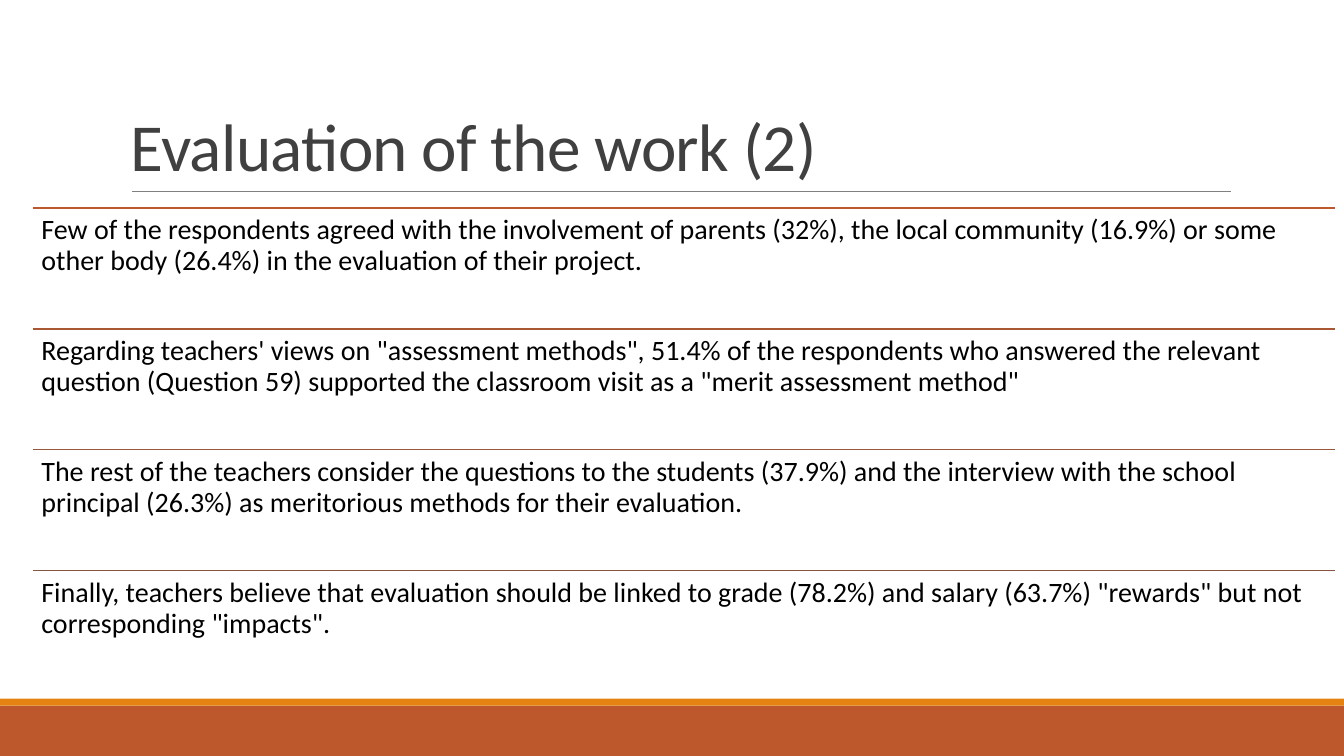
from dataclasses import dataclass

from lxml import etree
from pptx import Presentation
from pptx.dml.color import RGBColor
from pptx.enum.shapes import MSO_CONNECTOR, MSO_SHAPE
from pptx.enum.text import MSO_ANCHOR
from pptx.oxml.ns import qn
from pptx.slide import Slide
from pptx.text.text import Font
from pptx.util import Inches, Pt

STRAIGHT = MSO_CONNECTOR.STRAIGHT
RECTANGLE = MSO_SHAPE.RECTANGLE
TOP, BOTTOM = MSO_ANCHOR.TOP, MSO_ANCHOR.BOTTOM

SLIDE_W, SLIDE_H = 13.33, 7.5
FONT = "Calibri"
LIST_LEFT, LIST_RIGHT, LIST_TOP, ROW_STEP = 2.48, 99.32, 27.47, 16


@dataclass(frozen=True)
class Box:
    """Left, top, width and height in percent of the slide."""
    left: float
    top: float
    width: float
    height: float


@dataclass(frozen=True)
class Band:
    box: Box
    color: str


@dataclass(frozen=True)
class Finding:
    text: str
    rule_color: str


@dataclass(frozen=True)
class TextStyle:
    size: float
    color: str
    line_spacing: float
    space_after: float
    anchor: MSO_ANCHOR
    inset_x: float
    inset_y: float


TITLE_STYLE = TextStyle(48, "404040", 0.85, 0, BOTTOM, 0.1, 0.05)
FINDING_STYLE = TextStyle(20, "000000", 0.9, 7, TOP, 0.08, 0.08)

BANDS = [
    Band(Box(0, 93.33, 100, 6.67), "BD582C"),
    Band(Box(0, 92.4, 100, 0.93), "E48312"),
]

FINDINGS = [
    Finding(
        "Few of the respondents agreed with the involvement of parents (32%), "
        "the local community (16.9%) or some other body (26.4%) in the "
        "evaluation of their project.",
        "BD582C",
    ),
    Finding(
        "Regarding teachers' views on \"assessment methods\", 51.4% of the "
        "respondents who answered the relevant question (Question 59) "
        "supported the classroom visit as a \"merit assessment method\"",
        "AA5834",
    ),
    Finding(
        "The rest of the teachers consider the questions to the students "
        "(37.9%) and the interview with the school principal (26.3%) as "
        "meritorious methods for their evaluation.",
        "97573A",
    ),
    Finding(
        "Finally, teachers believe that evaluation should be linked to grade "
        "(78.2%) and salary (63.7%) \"rewards\" but not corresponding "
        "\"impacts\".",
        "865640",
    ),
]


def across(percent: float) -> int:
    return Inches(SLIDE_W * percent / 100)


def down(percent: float) -> int:
    return Inches(SLIDE_H * percent / 100)


def place(box: Box) -> tuple[int, int, int, int]:
    return across(box.left), down(box.top), across(box.width), down(box.height)


def rgb(color: str) -> RGBColor:
    return RGBColor.from_string(color)


def draw_band(s: Slide, band: Band) -> None:
    sp = s.shapes.add_shape(RECTANGLE, *place(band.box))
    sp.shadow.inherit = False
    sp.fill.solid()
    sp.fill.fore_color.rgb = rgb(band.color)
    sp.line.fill.background()


def draw_rule(s: Slide, left: float, right: float, top: float,
              color: str, width: float) -> None:
    rule = s.shapes.add_connector(
        STRAIGHT, across(left), down(top), across(right), down(top))
    rule.line.color.rgb = rgb(color)
    rule.line.width = Pt(width)
    etree.SubElement(rule._element.spPr, qn("a:effectLst"))


def draw_text(s: Slide, box: Box, text: str, style: TextStyle) -> Font:
    tf = s.shapes.add_textbox(*place(box)).text_frame
    tf.word_wrap = True
    tf.vertical_anchor = style.anchor
    tf.margin_left = tf.margin_right = Inches(style.inset_x)
    tf.margin_top = tf.margin_bottom = Inches(style.inset_y)
    tf.text = text
    p = tf.paragraphs[0]
    p.line_spacing = style.line_spacing
    p.space_after = Pt(style.space_after)
    font = p.runs[0].font
    font.name = FONT
    font.size = Pt(style.size)
    font.color.rgb = rgb(style.color)
    return font


def main() -> None:
    prs = Presentation()
    prs.slide_width, prs.slide_height = Inches(SLIDE_W), Inches(SLIDE_H)
    s = prs.slides.add_slide(prs.slide_layouts[6])

    for band in BANDS:
        draw_band(s, band)
    draw_rule(s, 9.83, 91.6, 25.33, "808080", 0.5)

    title_font = draw_text(
        s, Box(9, 4.13, 82.52, 21.07), "Evaluation of the work (2)", TITLE_STYLE)
    title_font._element.set("spc", "-50")

    for row, finding in enumerate(FINDINGS):
        top = LIST_TOP + row * ROW_STEP
        draw_rule(s, LIST_LEFT, LIST_RIGHT, top, finding.rule_color, 1.25)
        box = Box(LIST_LEFT, top, LIST_RIGHT - LIST_LEFT, ROW_STEP)
        draw_text(s, box, finding.text, FINDING_STYLE)

    prs.save("out.pptx")


if __name__ == "__main__":
    main()
